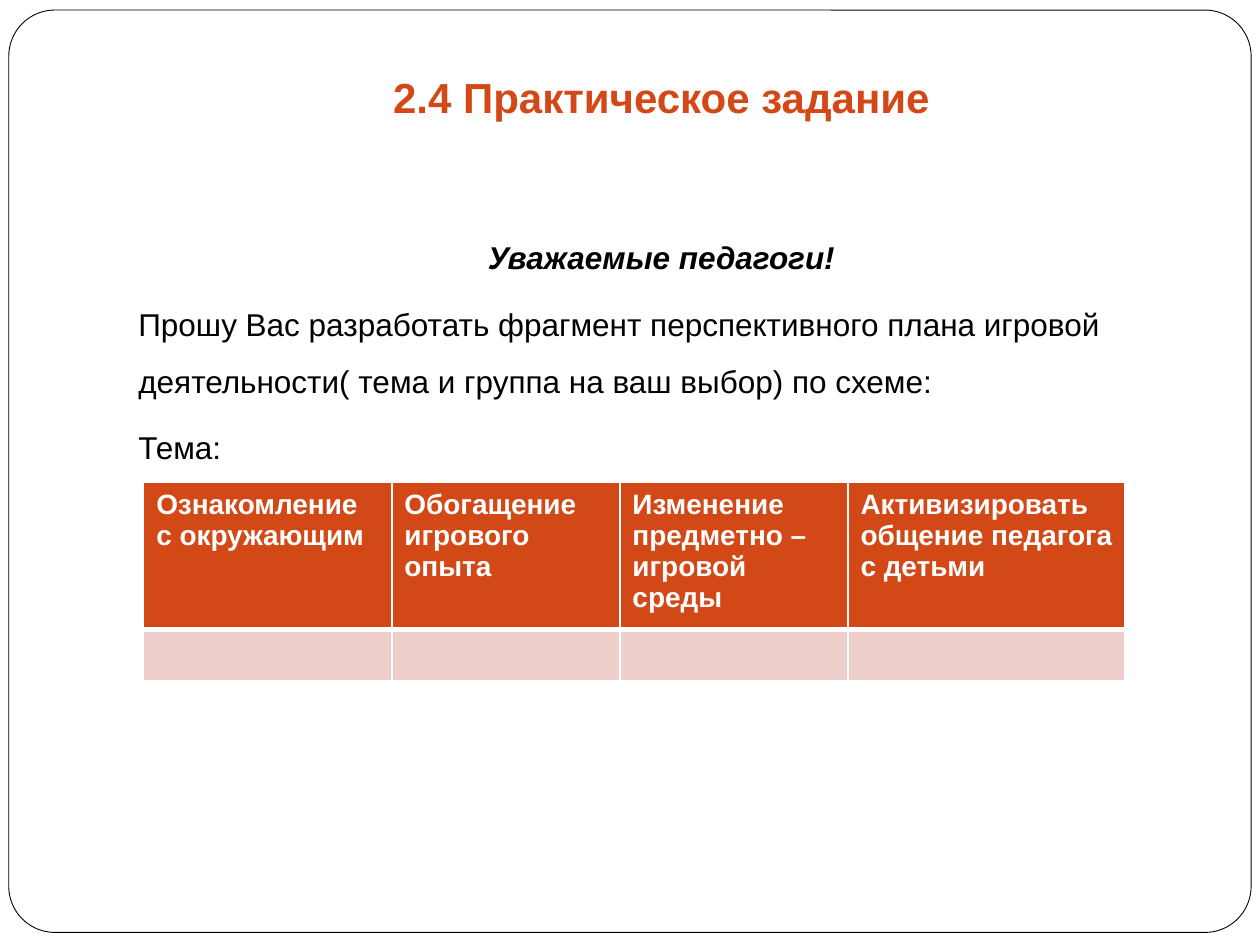
from dataclasses import dataclass

from lxml.etree import SubElement
from pptx import Presentation
from pptx.dml.color import RGBColor
from pptx.enum.shapes import MSO_SHAPE
from pptx.enum.text import MSO_ANCHOR, PP_ALIGN
from pptx.oxml.ns import qn
from pptx.util import Inches, Pt


@dataclass(frozen=True)
class Theme:
    """Colours, font and type sizes of the slide."""
    accent: RGBColor = RGBColor(0xD3, 0x48, 0x17)
    tint: RGBColor = RGBColor(0xEF, 0xCF, 0xCC)
    ink: RGBColor = RGBColor(0, 0, 0)
    paper: RGBColor = RGBColor(0xFF, 0xFF, 0xFF)
    font: str = "Arial"
    title_size: int = 24
    body_size: int = 18
    table_size: int = 16


THEME = Theme()
GREETING = "Уважаемые педагоги!"
REQUEST = [
    "Прошу Вас разработать фрагмент перспективного плана игровой "
    "деятельности( тема и группа на ваш выбор) по схеме:",
    "Тема:",
]
PLAN_COLUMNS = [
    ("Ознакомление с окружающим", 1.97),
    ("Обогащение игрового опыта", 1.81),
    ("Изменение предметно – игровой среды", 1.81),
    ("Активизировать общение педагога с детьми", 2.2),
]
HEADER_HEIGHT, ENTRY_HEIGHT = 1.09, 0.41


def style(paragraph, size, color, bold=False, italic=False):
    """Format every run of a paragraph."""
    for run in paragraph.runs:
        font = run.font
        font.name, font.size = THEME.font, Pt(size)
        font.bold, font.italic = bold, italic
        font.color.rgb = color


def add_frame(slide, left, top, width, height):
    """Draw the rounded border around the slide."""
    frame = slide.shapes.add_shape(
        MSO_SHAPE.ROUNDED_RECTANGLE,
        Inches(left), Inches(top), Inches(width), Inches(height))
    frame.adjustments[0] = 0.05
    frame.shadow.inherit = False
    frame.fill.solid()
    frame.fill.fore_color.rgb = THEME.paper
    frame.line.color.rgb = THEME.ink
    frame.line.width = Pt(0.5)
    tree = slide.shapes.element
    tree.remove(frame.element)
    tree.insert(2, frame.element)


def place_title(slide, left, top, width, height):
    """Move and format the title placeholder."""
    title = slide.shapes.title
    title.left, title.top = Inches(left), Inches(top)
    title.width, title.height = Inches(width), Inches(height)
    text = title.text_frame
    text.text = "2.4 Практическое задание"
    text.vertical_anchor = MSO_ANCHOR.BOTTOM
    text.margin_bottom = Inches(0.1)
    heading = text.paragraphs[0]
    heading.alignment = PP_ALIGN.CENTER
    style(heading, THEME.title_size, THEME.accent, bold=True)


def add_assignment(slide, left, top, width, height):
    """Write the greeting and the request below it."""
    assignment = slide.shapes.add_textbox(
        Inches(left), Inches(top), Inches(width), Inches(height)).text_frame
    assignment.word_wrap = True
    greeting = assignment.paragraphs[0]
    greeting.text = GREETING
    greeting.alignment = PP_ALIGN.CENTER
    greeting.line_spacing = 1.5
    style(greeting, THEME.body_size, THEME.ink, bold=True, italic=True)
    for sentence in REQUEST:
        request = assignment.add_paragraph()
        request.text = sentence
        request.line_spacing = 1.5
        request.space_before = Pt(5.8)
        style(request, THEME.body_size, THEME.ink)


def fill_cell(cell, color, bottom_width):
    """Fill a cell and give it white borders."""
    properties = cell._tc.get_or_add_tcPr()
    for side, width in (("L", 1), ("R", 1), ("T", 1), ("B", bottom_width)):
        border = SubElement(properties, qn(f"a:ln{side}"), w=str(Pt(width)))
        paint = SubElement(border, qn("a:solidFill"))
        SubElement(paint, qn("a:srgbClr"), val=str(THEME.paper))
    cell.fill.solid()
    cell.fill.fore_color.rgb = color


def add_plan(slide, left, top):
    """Add the plan table with its headings and an empty row."""
    width = sum(column_width for _, column_width in PLAN_COLUMNS)
    plan = slide.shapes.add_table(
        2, len(PLAN_COLUMNS), Inches(left), Inches(top), Inches(width),
        Inches(HEADER_HEIGHT + ENTRY_HEIGHT)).table
    plan.rows[0].height = Inches(HEADER_HEIGHT)
    plan.rows[1].height = Inches(ENTRY_HEIGHT)
    for index, (heading, column_width) in enumerate(PLAN_COLUMNS):
        plan.columns[index].width = Inches(column_width)
        header, entry = plan.cell(0, index), plan.cell(1, index)
        header.text_frame.text = heading
        style(header.text_frame.paragraphs[0], THEME.table_size,
              THEME.paper, bold=True)
        fill_cell(header, THEME.accent, 3)
        fill_cell(entry, THEME.tint, 1)


def main():
    """Build and save the slide."""
    deck = Presentation()
    deck.slide_width, deck.slide_height = Inches(10), Inches(7.5)
    slide = deck.slides.add_slide(deck.slide_layouts[5])
    add_frame(slide, 0.07, 0.08, 9.86, 7.32)
    place_title(slide, 1, 0.3, 8.5, 0.77)
    add_assignment(slide, 1, 1.69, 8.5, 4.89)
    add_plan(slide, 1.14, 3.83)
    deck.save("out.pptx")


if __name__ == "__main__":
    main()
